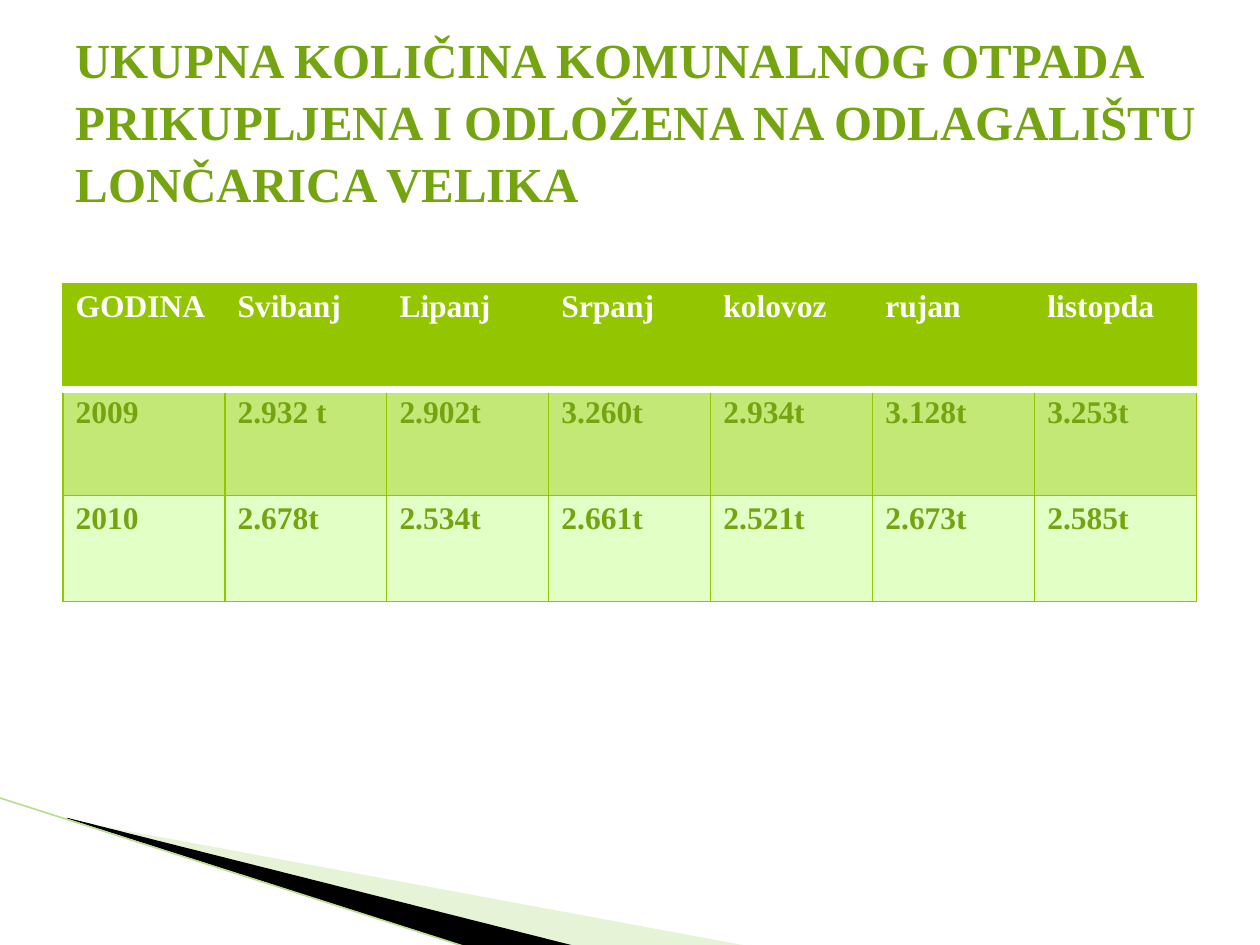
"""Build the slide on municipal waste collected at the Lončarica Velika landfill."""
from dataclasses import dataclass

from lxml import etree
from pptx import Presentation
from pptx.dml.color import RGBColor
from pptx.enum.shapes import MSO_CONNECTOR
from pptx.enum.text import MSO_ANCHOR, PP_ALIGN
from pptx.oxml.ns import qn
from pptx.util import Pt

STRAIGHT = MSO_CONNECTOR.STRAIGHT
MIDDLE, TOP = MSO_ANCHOR.MIDDLE, MSO_ANCHOR.TOP
LEFT = PP_ALIGN.LEFT
TITLE_ONLY = 5
FONT = "Times New Roman"
COLOURS = {
    "white": "FFFFFF", "black": "000000", "lime": "94C600", "text": "74A510",
    "band": "C3E876", "pale": "E2FFC5", "wedge": "C3E19D", "stripe": "BDDC94",
}
TITLE = ("UKUPNA KOLIČINA KOMUNALNOG OTPADA PRIKUPLJENA I ODLOŽENA "
         "NA ODLAGALIŠTU LONČARICA VELIKA")
COLUMN_WIDTH, ROW_HEIGHT = 648 / 7, 60.5


@dataclass
class Wedge:
    """A filled outline in the lower left corner."""
    points: list[tuple[float, float]]
    colour: str
    opacity: int = 100


@dataclass
class Row:
    """One table row with its look."""
    values: list[str]
    fill: str
    text: str
    top_line: tuple[str, float] = ("lime", 0.75)
    bottom_line: tuple[str, float] = ("lime", 0.75)


HEADER_LINE = ("white", 4.33)
WEDGES = [
    Wedge([(39.6, 468.7), (428.4, 540.7), (328.3, 540.7), (39.6, 468)], "wedge", 40),
    Wedge([(38.2, 467.3), (329, 540.7), (267.8, 541.4), (38.9, 468)], "black"),
]
ROWS = [
    Row(["GODINA", "Svibanj", "Lipanj", "Srpanj", "kolovoz", "rujan", "listopda"],
        "lime", "white", bottom_line=HEADER_LINE),
    Row(["2009", "2.932 t", "2.902t", "3.260t", "2.934t", "3.128t", "3.253t"],
        "band", "text", top_line=HEADER_LINE),
    Row(["2010", "2.678t", "2.534t", "2.661t", "2.521t", "2.673t", "2.585t"],
        "pale", "text"),
]


def colour_of(name: str) -> RGBColor:
    """Return the named colour."""
    return RGBColor.from_string(COLOURS[name])


def write(frame, text: str, *, size: float, colour: str, spacing: float = 1.0) -> None:
    """Put bold, left-aligned text in a frame."""
    para = frame.paragraphs[0]
    para.alignment = LEFT
    para.line_spacing = spacing
    span = para.add_run()
    span.text = text
    span.font.name = FONT
    span.font.size = Pt(size)
    span.font.bold = True
    span.font.color.rgb = colour_of(colour)


def draw_wedge(page, wedge: Wedge) -> None:
    """Draw one corner wedge."""
    start, *others = [(Pt(x), Pt(y)) for x, y in wedge.points]
    builder = page.shapes.build_freeform(*start)
    builder.add_line_segments(others, close=True)
    shape = builder.convert_to_shape()
    shape.shadow.inherit = False
    shape.line.fill.background()
    shape.fill.solid()
    shape.fill.fore_color.rgb = colour_of(wedge.colour)
    if wedge.opacity < 100:
        tint = shape.fill._xPr.find(".//" + qn("a:srgbClr"))
        etree.SubElement(tint, qn("a:alpha"), val=str(wedge.opacity * 1000))


def draw_stripe(page) -> None:
    """Draw the thin line along the wedges."""
    stripe = page.shapes.add_connector(STRAIGHT, Pt(-0.7), Pt(455.8), Pt(267.1), Pt(541.4))
    stripe.line.color.rgb = colour_of("stripe")
    stripe.line.width = Pt(0.95)
    etree.SubElement(stripe._element.spPr, qn("a:effectLst"))


def set_borders(cell, row: Row) -> None:
    """Give a cell its four border lines."""
    side = ("lime", 0.75)
    lines = {"lnL": side, "lnR": side, "lnT": row.top_line, "lnB": row.bottom_line}
    properties = cell._tc.get_or_add_tcPr()
    for index, (tag, (colour, width)) in enumerate(lines.items()):
        line = etree.Element(qn("a:" + tag), w=str(int(Pt(width))))
        fill = etree.SubElement(line, qn("a:solidFill"))
        etree.SubElement(fill, qn("a:srgbClr"), val=COLOURS[colour])
        properties.insert(index, line)


def draw_table(page, rows: list[Row]) -> None:
    """Draw the table of monthly quantities."""
    count = len(rows[0].values)
    table = page.shapes.add_table(len(rows), count, Pt(36), Pt(162), Pt(648),
                                  Pt(ROW_HEIGHT * len(rows))).table
    for column in table.columns:
        column.width = Pt(COLUMN_WIDTH)
    for row_index, row in enumerate(rows):
        table.rows[row_index].height = Pt(ROW_HEIGHT)
        for column_index, value in enumerate(row.values):
            cell = table.cell(row_index, column_index)
            cell.vertical_anchor = TOP
            cell.fill.solid()
            cell.fill.fore_color.rgb = colour_of(row.fill)
            set_borders(cell, row)
            write(cell.text_frame, value, size=18, colour=row.text)


def place_title(page) -> None:
    """Position and fill the title placeholder."""
    title = page.shapes.title
    title.left, title.top, title.width, title.height = Pt(36), Pt(21.6), Pt(669.6), Pt(90)
    frame = title.text_frame
    frame.word_wrap = True
    frame.vertical_anchor = MIDDLE
    frame.margin_bottom = Pt(0)
    write(frame, TITLE, size=28, colour="text", spacing=1.05)


def main() -> None:
    """Build and save the deck."""
    deck = Presentation()
    deck.slide_width, deck.slide_height = Pt(720), Pt(540)
    page = deck.slides.add_slide(deck.slide_layouts[TITLE_ONLY])
    for wedge in WEDGES:
        draw_wedge(page, wedge)
    draw_stripe(page)
    draw_table(page, ROWS)
    place_title(page)
    deck.save("out.pptx")


if __name__ == "__main__":
    main()
